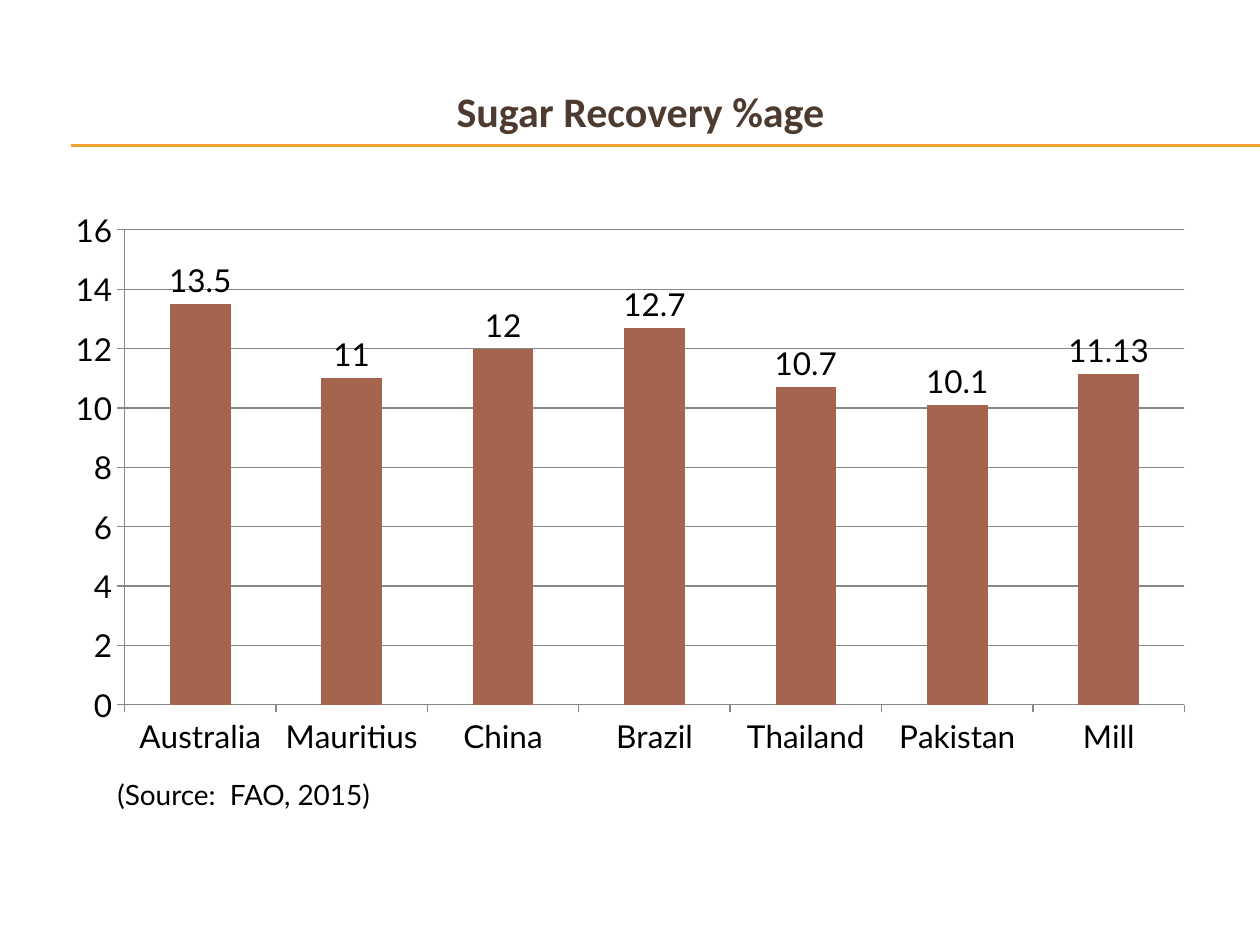
import pptx
import pptx.chart.data
import pptx.dml.color
import pptx.enum.chart
import pptx.enum.shapes
import pptx.enum.text
import pptx.util
import lxml.etree

Pt = pptx.util.Pt
ALIGN = pptx.enum.text.PP_ALIGN
ANCHOR = pptx.enum.text.MSO_ANCHOR
CHART = pptx.enum.chart
RATES = {"Australia": 13.5, "Mauritius": 11, "China": 12, "Brazil": 12.7,
         "Thailand": 10.7, "Pakistan": 10.1, "Mill": 11.13}


def color(code):
    """Turn a hex string into a colour."""
    return pptx.dml.color.RGBColor.from_string(code)


def style(font, size, name="Lato", code="000000", bold=False):
    """Set the look of a font."""
    font.size, font.name, font.bold = Pt(size), name, bold
    font.color.rgb = color(code)


def write(shape, text, align=ALIGN.LEFT, anchor=ANCHOR.TOP, **look):
    """Put formatted text in a shape."""
    frame = shape.text_frame
    frame.word_wrap = True
    frame.vertical_anchor = anchor
    para = frame.paragraphs[0]
    para.alignment = align
    run = para.add_run()
    run.text = text
    style(run.font, **look)


def place(shape, box):
    """Move a shape to a box."""
    shape.left, shape.top, shape.width, shape.height = map(Pt, box)


def rule(slide, left, right, top):
    """Draw one level gold line."""
    line = slide.shapes.add_connector(
        pptx.enum.shapes.MSO_CONNECTOR.STRAIGHT,
        Pt(left), Pt(top), Pt(right), Pt(top))
    line.line.color.rgb = color("F0A22E")
    line.line.width = Pt(0.75)
    props = line._element.spPr
    lxml.etree.SubElement(props, pptx.oxml.ns.qn("a:effectLst"))


def header(slide, box):
    """Set the title and the double rule that crosses its foot."""
    left, top, width, height = box
    for drop in (7.2, 6.5):
        rule(slide, left + 16.5, 720, top + height - drop)
    title = slide.shapes.title
    place(title, box)
    write(title, "Sugar Recovery %age", align=ALIGN.CENTER,
          anchor=ANCHOR.MIDDLE, size=24, name="Calibri",
          code="4E3B30", bold=True)


def graph(slide, box):
    """Chart the recovery rates as columns."""
    data = pptx.chart.data.CategoryChartData()
    data.categories = list(RATES)
    data.add_series("Series 1", list(RATES.values()))
    chart = slide.shapes.add_chart(
        CHART.XL_CHART_TYPE.COLUMN_CLUSTERED, *map(Pt, box), data).chart
    chart.has_legend = chart.has_title = False
    style(chart.font, size=18)
    plot = chart.plots[0]
    plot.gap_width = 150
    plot.vary_by_categories = False
    fill = plot.series[0].format.fill
    fill.solid()
    fill.fore_color.rgb = color("A5644E")
    plot.has_data_labels = True
    labels = plot.data_labels
    labels.show_value = True
    labels.position = CHART.XL_LABEL_POSITION.OUTSIDE_END
    style(labels.font, size=18)
    scale = chart.value_axis
    scale.minimum_scale, scale.maximum_scale, scale.major_unit = 0, 16, 2
    scale.has_major_gridlines = True
    for axis in (scale, chart.category_axis):
        axis.major_tick_mark = CHART.XL_TICK_MARK.OUTSIDE
        style(axis.tick_labels.font, size=18)
    for part in (scale, chart.category_axis, scale.major_gridlines):
        part.format.line.color.rgb = color("878787")
        part.format.line.width = Pt(0.75)


def source(slide, box):
    """Name the source under the chart."""
    note = slide.shapes.add_textbox(*map(Pt, box))
    write(note, "(Source:  FAO, 2015)", size=16)


def main():
    """Build and save the slide."""
    deck = pptx.Presentation()
    deck.slide_width, deck.slide_height = Pt(720), Pt(540)
    slide = deck.slides.add_slide(deck.slide_layouts[5])
    header(slide, (24, 36, 684, 54))
    graph(slide, (30, 114, 660, 324))
    source(slide, (60, 441, 612, 26.6))
    deck.save("out.pptx")


if __name__ == "__main__":
    main()
